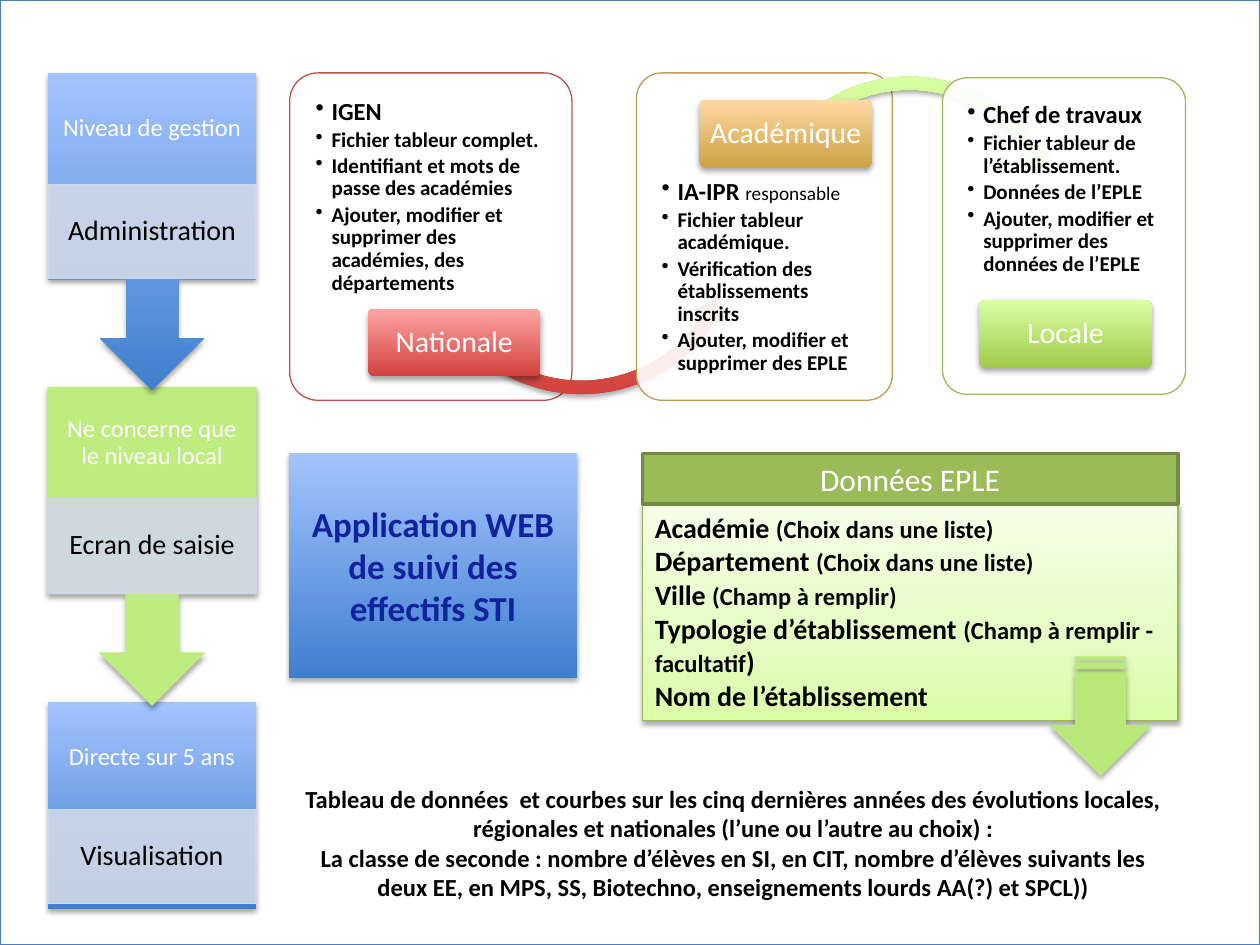
from copy import deepcopy

from lxml import etree
from pptx import Presentation
from pptx.dml.color import RGBColor
from pptx.enum.shapes import MSO_SHAPE as Preset
from pptx.enum.text import MSO_ANCHOR as Anchor, PP_ALIGN as Align
from pptx.oxml.ns import qn
from pptx.util import Cm, Pt

FONT = "Calibri"
BLACK = RGBColor(0x00, 0x00, 0x00)
WHITE = RGBColor(0xFF, 0xFF, 0xFF)
NAVY = RGBColor(0x11, 0x22, 0x9D)
FRAME_BLUE = RGBColor(0x4B, 0x7E, 0xBC)
PALE_BLUE = RGBColor(0xD0, 0xD8, 0xE8)
LIME = RGBColor(0xBF, 0xEC, 0x7F)
ARROW_LIME = RGBColor(0xBB, 0xE9, 0x79)
CARD_RED = RGBColor(0xC0, 0x50, 0x4D)
CARD_GOLD = RGBColor(0xBD, 0x9B, 0x53)
CARD_GREEN = RGBColor(0x9B, 0xBB, 0x59)
DARK_GREEN = RGBColor(0x73, 0x8A, 0x42)
EDGE_GREEN = RGBColor(0x98, 0xB9, 0x55)

# Gradients: (position, colour) stops from bottom to top
BLUES = [(0, RGBColor(0x3F, 0x7F, 0xCE)), (1, RGBColor(0xA4, 0xC4, 0xFF))]
REDS = [(0, RGBColor(0xD1, 0x40, 0x3C)), (1, RGBColor(0xFF, 0xA6, 0xA5))]
GOLDS = [(0, RGBColor(0xCD, 0xA1, 0x43)), (1, RGBColor(0xFF, 0xDA, 0xA5))]
GREENS = [(0, RGBColor(0xA0, 0xCA, 0x4A)), (1, RGBColor(0xDA, 0xFF, 0xA5))]
PALE_GREENS = [(0, RGBColor(0xDA, 0xFD, 0xA7)), (0.35, RGBColor(0xE4, 0xFC, 0xC2)),
               (1, RGBColor(0xF5, 0xFF, 0xE7))]


def paint_gradient(shape, stops):
    shape.fill.gradient()
    shape.fill.gradient_angle = 90
    gradient = shape._element.spPr.find(qn("a:gradFill"))
    gradient.set("rotWithShape", "0")
    stop_list = gradient.find(qn("a:gsLst"))
    for _ in stops[2:]:
        stop_list.append(deepcopy(stop_list[-1]))
    for stop, (position, color) in zip(shape.fill.gradient_stops, stops):
        stop.position = position
        stop.color.rgb = color


def add_shadow(shape):
    effects = shape._element.spPr.find(qn("a:effectLst"))
    shadow = etree.SubElement(effects, qn("a:outerShdw"), blurRad="40000", dist="23000",
                              dir="5400000", rotWithShape="0")
    color = etree.SubElement(shadow, qn("a:srgbClr"), val="000000")
    etree.SubElement(color, qn("a:alpha"), val="35000")


def add_box(slide, preset, box, fill, line=None, line_width=0.75, shadow=True,
            opacity=None, adjustments=()):
    shape = slide.shapes.add_shape(preset, *(Cm(length) for length in box))
    shape.shadow.inherit = False
    for index, value in enumerate(adjustments):
        shape.adjustments[index] = value
    if isinstance(fill, list):
        paint_gradient(shape, fill)
    else:
        shape.fill.solid()
        shape.fill.fore_color.rgb = fill
    if opacity:
        color = shape._element.spPr.find(qn("a:solidFill"))[0]
        etree.SubElement(color, qn("a:alpha"), val=str(opacity * 1000))
    if line is None:
        shape.line.fill.background()
    else:
        shape.line.color.rgb = line
        shape.line.width = Pt(line_width)
    if shadow:
        add_shadow(shape)
    return shape


def write(shape, lines, color=BLACK, bold=False, align=Align.CENTER, anchor=Anchor.MIDDLE,
          insets=(0.25, 0.13), spacing=None, bulleted=False):
    """Each line is a list of (text, size) or (text, size, bold) pieces."""
    frame = shape.text_frame
    frame.word_wrap = True
    frame.vertical_anchor = anchor
    frame.margin_left = frame.margin_right = Cm(insets[0])
    frame.margin_top = frame.margin_bottom = Cm(insets[1])
    frame.text = "\n".join(pieces[0][0] for pieces in lines)
    for paragraph, pieces in zip(frame.paragraphs, lines):
        paragraph.alignment = align
        if spacing:
            paragraph.line_spacing = spacing
        if bulleted:
            paragraph.level = 1
            paragraph.space_after = Pt(2)
            properties = paragraph._p.get_or_add_pPr()
            properties.set("marL", str(Cm(0.32)))
            properties.set("indent", str(-Cm(0.32)))
            etree.SubElement(properties, qn("a:buChar"), char="•")
        for text, *_ in pieces[1:]:
            paragraph.add_run().text = text
        for run, (_, size, *weight) in zip(paragraph.runs, pieces):
            run.font.name = FONT
            run.font.size = Pt(size)
            run.font.bold = weight[0] if weight else bold
            run.font.color.rgb = color


def add_text(slide, box, lines, **options):
    text_box = slide.shapes.add_textbox(*(Cm(length) for length in box))
    write(text_box, lines, **options)


def build_card(slide, box, items, line, gradient, label, label_offset,
               anchor=Anchor.TOP, arc=None):
    left, top, width, height = box
    card = add_box(slide, Preset.ROUNDED_RECTANGLE, box, WHITE, line, shadow=False,
                   opacity=90, adjustments=[0.1])
    write(card, items, bold=True, align=Align.LEFT, anchor=anchor, insets=(0.36, 0.36),
          spacing=0.9, bulleted=True)
    # Arc leading to the next level
    if arc:
        preset, arc_fill, (across, down, size), adjustments = arc
        add_box(slide, preset, (left + across, top + down, size, size), arc_fill,
                adjustments=adjustments)
    # Level name
    across, down = label_offset
    button = add_box(slide, Preset.ROUNDED_RECTANGLE, (left + across, top + down, 3.48, 1.37),
                     gradient, adjustments=[0.1])
    write(button, [[(label, 17)]], WHITE, insets=(0.1, 0.05), spacing=0.9)


def build_step(slide, box, heading, detail, fill, split=0.54, last=False):
    left, top, width, height = box
    body_height = height if last else height * 0.65
    shape = add_box(slide, Preset.RECTANGLE if last else Preset.UP_ARROW_CALLOUT, box, fill,
                    fill if fill == LIME else None)
    if not last:
        shape.rotation = 180
    add_text(slide, (left, top, width, 2.24), [[(heading, 14)]], color=WHITE,
             insets=(0.28, 0.28), spacing=0.9)
    band = add_box(slide, Preset.RECTANGLE, (left, top + body_height * split, width, 1.9),
                   PALE_BLUE, PALE_BLUE, shadow=False, opacity=90)
    write(band, [[(detail, 16)]], insets=(0.3, 0.05), spacing=0.9)


def build_school_panel(slide, box, title, fields):
    left, top, width, height = box
    header_height = 1.02
    body = add_box(slide, Preset.RECTANGLE,
                   (left, top + header_height, width, height - header_height),
                   PALE_GREENS, EDGE_GREEN)
    write(body, fields, bold=True, align=Align.LEFT, anchor=Anchor.TOP)
    header = add_box(slide, Preset.RECTANGLE, (left, top, width, header_height), CARD_GREEN,
                     DARK_GREEN, 2, shadow=False)
    write(header, [[(title, 18)]], WHITE, insets=(0.25, 0))


def bullets(heading, *items):
    return [heading] + [[(item, 12)] for item in items]


def main():
    presentation = Presentation()
    presentation.slide_width, presentation.slide_height = Cm(25.4), Cm(19.05)
    slide = presentation.slides.add_slide(presentation.slide_layouts[6])
    add_box(slide, Preset.RECTANGLE, (0, 0, 25.4, 19.05), WHITE, FRAME_BLUE)

    # Three management levels
    build_card(slide, (5.84, 1.47, 5.69, 6.6),
               bullets([("IGEN", 14)], "Fichier tableur complet.",
                       "Identifiant et mots de passe des académies",
                       "Ajouter, modifier et supprimer des académies, des départements"),
               CARD_RED, REDS, "Nationale", (1.58, 4.75),
               arc=(Preset.LEFT_CIRCULAR_ARROW, REDS, (2.49, -0.1, 6.78),
                    [0.04, 4.81, 19.35, 87.03, 0.05]))
    build_card(slide, (12.83, 1.47, 5.16, 6.6),
               bullets([("IA-IPR ", 14), ("responsable", 11, False)],
                       "Fichier tableur académique.",
                       "Vérification des établissements inscrits",
                       "Ajouter, modifier et supprimer des EPLE"),
               CARD_GOLD, GOLDS, "Académique", (1.27, 0.54), Anchor.BOTTOM,
               arc=(Preset.CIRCULAR_ARROW, GREENS, (2.21, -0.12, 6.58),
                    [0.04, 4.98, 196.14, 128.63, 0.05]))
    build_card(slide, (19, 1.57, 4.9, 6.38),
               bullets([("Chef de travaux", 14)], "Fichier tableur de l’établissement.",
                       "Données de l’EPLE",
                       "Ajouter, modifier et supprimer des données de l’EPLE"),
               CARD_GREEN, GREENS, "Locale", (0.74, 4.48))

    # Steps down the left side
    left, top, width, pitch = 0.97, 1.47, 4.19, 6.34
    build_step(slide, (left, top + 2 * pitch, width, 4.17), "Directe sur 5 ans",
               "Visualisation", BLUES, 0.52, last=True)
    build_step(slide, (left, top + pitch, width, 6.4), "Ne concerne que le niveau local",
               "Ecran de saisie", LIME)
    build_step(slide, (left, top, width, 6.4), "Niveau de gestion", "Administration", BLUES)

    # Results shown
    add_text(slide, (5.82, 15.67, 17.93, 2.64), [
        [("Tableau de données  et courbes sur les cinq dernières années des évolutions "
          "locales, régionales et nationales (l’une ou l’autre au choix) :", 14)],
        [("La classe de seconde : nombre d’élèves en SI, en CIT, nombre d’élèves suivants les "
          "deux EE, en MPS, SS, Biotechno, enseignements lourds AA(?) et SPCL))", 14)],
    ], bold=True, anchor=Anchor.TOP)

    # School data, with the arrow to the results
    build_school_panel(slide, (12.95, 9.14, 10.8, 5.39), "Données EPLE", [
        [("Académie ", 16), ("(Choix dans une liste)", 14)],
        [("Département ", 16), ("(Choix dans une liste)", 14)],
        [("Ville ", 16), ("(Champ à remplir)", 14)],
        [("Typologie d’établissement ", 16), ("(Champ à remplir - facultatif", 14), (")", 16)],
        [("Nom de l’établissement", 16)],
    ])
    arrow = add_box(slide, Preset.STRIPED_RIGHT_ARROW, (20.98, 13.41, 2.41, 2.06), ARROW_LIME)
    arrow.rotation = 90

    # Application name
    application = add_box(slide, Preset.RECTANGLE, (5.82, 9.14, 5.82, 4.52), BLUES)
    write(application, [[("Application WEB de suivi des effectifs STI", 20)]], NAVY, bold=True)

    presentation.save("out.pptx")


if __name__ == "__main__":
    main()
